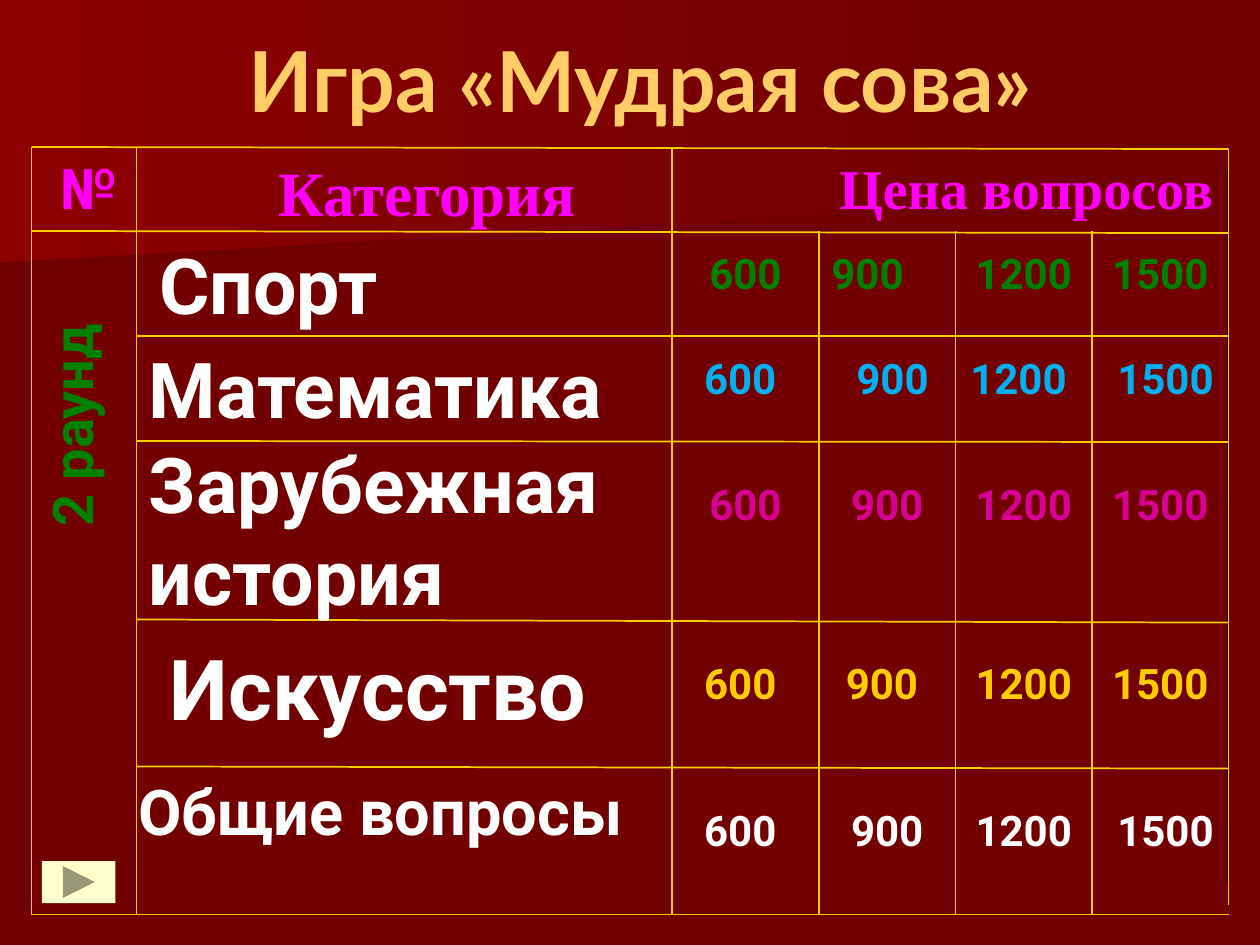
from lxml import etree
from pptx import Presentation
from pptx.dml.color import RGBColor
from pptx.enum.shapes import MSO_CONNECTOR, MSO_SHAPE
from pptx.enum.text import MSO_ANCHOR, PP_ALIGN
from pptx.oxml.ns import qn
from pptx.util import Pt

PX = 7620
STRAIGHT = MSO_CONNECTOR.STRAIGHT
NEXT_BUTTON = MSO_SHAPE.ACTION_BUTTON_FORWARD_OR_NEXT
LEFT, CENTER = PP_ALIGN.LEFT, PP_ALIGN.CENTER
TOP, MIDDLE = MSO_ANCHOR.TOP, MSO_ANCHOR.MIDDLE
COLORS = {
    "back": "720000", "glow": "8C0000", "shade": "6F0000", "title": "FFCC66",
    "grid": "FFCC00", "black": "000000", "white": "FFFFFF", "head": "FF00FF",
    "green": "008000", "blue": "00B0F0", "pink": "D60093", "button": "FFFFCC",
}
PRICES = ("600", "900", "1200", "1500")
HEADERS = [
    ("№", (0, 0, 110, 80), "Roboto", 32),
    ("Категория", (70, 0, 614, 80), "Times New Roman", 36),
    ("Цена вопросов", (755, 0, 385, 80), "Times New Roman", 32),
]
CATEGORIES = [
    ("Спорт", 44, (110, 80, 500, 100), "green", 90,
     [(620, 120, 80), (750, 120, 90), (880, 130, 80), (1010, 130, 90)]),
    ("Математика", 44, (100, 179, 510, 100), "blue", 190,
     [(620, 110, 90), (750, 140, 90), (870, 140, 100), (1010, 140, 90)]),
    ("Зарубежная история", 44, (100, 270, 500, 180), "pink", 310,
     [(620, 120, 80), (760, 110, 90), (880, 130, 100), (1010, 130, 90)]),
    (" Искусство", 48, (100, 460, 480, 126), "grid", 480,
     [(600, 150, 70), (740, 140, 90), (880, 130, 90), (1010, 130, 80)]),
    ("Общие вопросы", 36, (90, 590, 530, 140), "white", 620,
     [(610, 130, 80), (750, 130, 70), (880, 130, 100), (1010, 140, 100)]),
]


def rgb(name):
    """Return the named colour."""
    return RGBColor.from_string(COLORS[name])


def write(sp, text, size, color, font="Roboto", align=CENTER, anchor=TOP):
    """Put one formatted bold run into a shape."""
    tf = sp.text_frame
    for key, value in {"word_wrap": True, "vertical_anchor": anchor}.items():
        setattr(tf, key, value)
    p = tf.paragraphs[0]
    p.alignment = align
    r = p.add_run()
    r.text = text
    for key, value in {"name": font, "size": Pt(size), "bold": True}.items():
        setattr(r.font, key, value)
    r.font.color.rgb = rgb(color)


def add_text(s, origin, box, *args, **kwargs):
    """Add a text box placed relative to an origin."""
    left, top, width, height = box
    sp = s.shapes.add_textbox((origin[0] + left) * PX, (origin[1] + top) * PX,
                              width * PX, height * PX)
    write(sp, *args, **kwargs)
    return sp


def add_line(s, origin, ends, color="grid"):
    """Add a thin straight line placed relative to an origin."""
    points = [(origin[i % 2] + value) * PX for i, value in enumerate(ends)]
    line = s.shapes.add_connector(STRAIGHT, *points)
    line.line.color.rgb = rgb(color)
    line.line.width = Pt(1)
    etree.SubElement(line.element.spPr, qn("a:effectLst"))


def add_backdrop(s):
    """Fill the background and lay the two gradient bands over it."""
    s.background.fill.solid()
    s.background.fill.fore_color.rgb = rgb("back")
    bands = [
        ("shade", [(934, 184), (0, 260), (0, 121), (935, 121), (934, 154)]),
        ("glow", [(950, 194), (0, 250), (0, 0), (950, 0)]),
    ]
    for color, points in bands:
        builder = s.shapes.build_freeform(*points[0], scale=PX)
        builder.add_line_segments(points[1:], close=True)
        sp = builder.convert_to_shape()
        sp.shadow.inherit = False
        sp.line.fill.background()
        sp.fill.gradient()
        sp.fill.gradient_angle = 0
        for stop, name, position in zip(sp.fill.gradient_stops, (color, "back"), (0, 1)):
            stop.color.rgb = rgb(name)
            stop.position = position


def add_title(s, box):
    """Place the title placeholder above the backdrop."""
    title = s.shapes.title
    s.shapes.element.append(title.element)
    for key, value in zip(("left", "top", "width", "height"), box):
        setattr(title, key, value * PX)
    write(title, "Игра «Мудрая сова»", 48, "title", "Lato", anchor=MIDDLE)


def add_grid(s, box):
    """Draw the rules of the game board."""
    left, top, width, height = box
    origin = (left, top)
    add_line(s, origin, (0, 30, 0, 710), "black")
    add_line(s, origin, (width - 1, 22, width - 1, 701), "black")
    for x, y, drop in [(0, 0, 2), (0, 80, 2), (100, 180, 0), (100, 280, 1),
                       (100, 450, 3), (100, 590, 2), (0, height, 0)]:
        add_line(s, origin, (x, y, width, y + drop))
    for x, start, end in [(0, 0, height), (100, 0, height), (610, 0, height),
                          (750, 80, height), (880, 80, height), (1010, 80, height),
                          (width, 2, 82), (width, 70, 722)]:
        add_line(s, origin, (x, start, x, end))


def add_board(s, box):
    """Write the headers, round name, categories and prices."""
    origin = box[:2]
    for text, cell, font, size in HEADERS:
        add_text(s, origin, cell, text, size, "head", font)
    sp = add_text(s, origin, (0, 80, 90, 370), "2 раунд", 32, "green")
    sp.element.txBody.bodyPr.set("vert", "vert270")
    for name, size, cell, color, top, price_cells in CATEGORIES:
        add_text(s, origin, cell, name, size, "white", align=LEFT)
        for price, (left, width, height) in zip(PRICES, price_cells):
            align = LEFT if (name, price) == ("Спорт", "900") else CENTER
            add_text(s, origin, (left, top, width, height), price, 24, color, align=align)


def add_next_button(s, box):
    """Add the forward button."""
    sp = s.shapes.add_shape(NEXT_BUTTON, *(value * PX for value in box))
    sp.shadow.inherit = False
    sp.fill.solid()
    sp.fill.fore_color.rgb = rgb("button")
    sp.line.fill.background()


def main():
    """Build and save the slide."""
    prs = Presentation()
    prs.slide_width, prs.slide_height = 1200 * PX, 900 * PX
    s = prs.slides.add_slide(prs.slide_layouts[5])
    board = (30, 140, 1140, 731)
    add_backdrop(s)
    add_title(s, (40, 20, 1140, 110))
    add_grid(s, board)
    add_board(s, board)
    add_next_button(s, (40, 820, 70, 40))
    prs.save("out.pptx")


if __name__ == "__main__":
    main()
